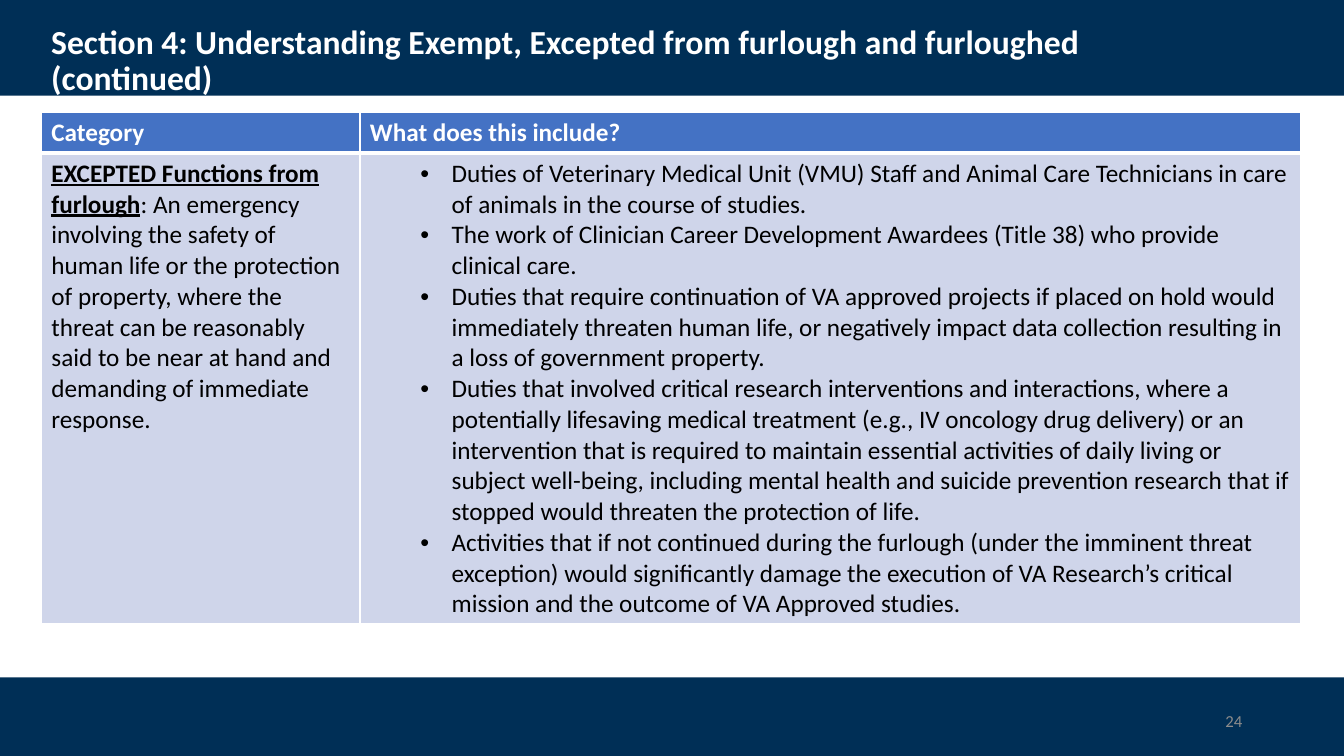
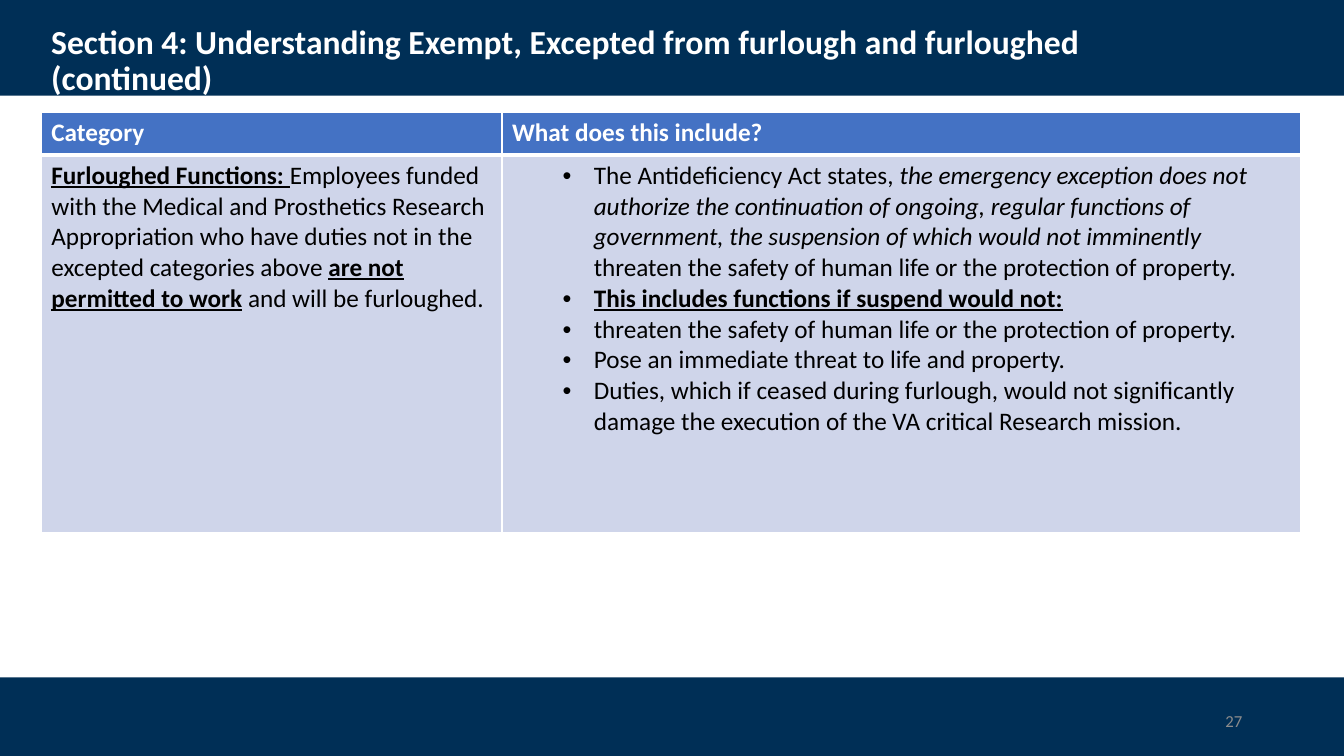
import pptx
import pptx.dml.color
import pptx.enum.shapes
import pptx.enum.text
import pptx.oxml
import pptx.oxml.ns
import pptx.util
from pptx.dml.color import RGBColor
from pptx.util import Inches, Pt

NAVY = RGBColor(0x00, 0x2F, 0x56)
BLUE = RGBColor(0x44, 0x72, 0xC4)
PALE_BLUE = RGBColor(0xCF, 0xD5, 0xEA)
WHITE = RGBColor(0xFF, 0xFF, 0xFF)
BLACK = RGBColor(0x00, 0x00, 0x00)
GREY = RGBColor(0x8C, 0x8C, 0x8C)

FONT = "Calibri"
SLIDE_WIDTH, SLIDE_HEIGHT = 13.33, 7.5
FOOTER_TOP = 6.72
TABLE_LEFT, TABLE_TOP, TABLE_WIDTH = 0.41, 1.12, 12.49
TITLE = ("Section 4: Understanding Exempt, Excepted from furlough "
         "and furloughed (continued)")
HEADINGS = ("Category", "What does this include?")

# Text is a list of (words, style) runs; style letters: b bold, i italic, u underline.
EXCEPTED = [
    ("EXCEPTED Functions from furlough", "bu"),
    (": An emergency involving the safety of human life or the protection of "
     "property, where the threat can be reasonably said to be near at hand and "
     "demanding of immediate response.", ""),
]
EXCEPTED_DUTIES = [
    [("Duties of Veterinary Medical Unit (VMU) Staff and Animal Care Technicians "
      "in care of animals in the course of studies.", "")],
    [("The work of Clinician Career Development Awardees (Title 38) who provide "
      "clinical care.", "")],
    [("Duties that require continuation of VA approved projects if placed on hold "
      "would immediately threaten human life, or negatively impact data collection "
      "resulting in a loss of government property.", "")],
    [("Duties that involved critical research interventions and interactions, where "
      "a potentially lifesaving medical treatment (e.g., IV oncology drug delivery) "
      "or an intervention that is required to maintain essential activities of daily "
      "living or subject well-being, including mental health and suicide prevention "
      "research that if stopped would threaten the protection of life.", "")],
    [("Activities that if not continued during the furlough (under the imminent "
      "threat exception) would significantly damage the execution of VA Research’s "
      "critical mission and the outcome of VA Approved studies.", "")],
]
FURLOUGHED = [
    ("Furloughed Functions: ", "bu"),
    ("Employees funded with the Medical and Prosthetics Research Appropriation who "
     "have duties not in the excepted categories above ", ""),
    ("are not permitted to work", "bu"),
    (" and will be furloughed.", ""),
]
FURLOUGHED_DUTIES = [
    [("The Antideficiency Act states, ", ""),
     ("the emergency exception does not authorize the continuation of ongoing, "
      "regular functions of government, the suspension of which would not "
      "imminently", "i"),
     (" threaten the safety of human life or the protection of property.", "")],
    [("This includes functions if suspend would not:", "bu")],
    [("threaten the safety of human life or the protection of property.", "")],
    [("Pose an immediate threat to life and property.", "")],
    [("Duties, which if ceased during furlough, would not significantly damage the "
      "execution of the VA critical Research mission.", "")],
]


def style_paragraph(paragraph, size, color, bold=False):
    font = paragraph.font
    font.name, font.size, font.bold = FONT, Pt(size), bold
    font.color.rgb = color


def add_band(slide, top, height):
    band = slide.shapes.add_shape(
        pptx.enum.shapes.MSO_SHAPE.RECTANGLE,
        0, Inches(top), Inches(SLIDE_WIDTH), Inches(height))
    band.shadow.inherit = False
    band.fill.solid()
    band.fill.fore_color.rgb = NAVY
    band.line.fill.background()


def add_label(slide, text, left, top, width, height):
    """Add a one-paragraph text box and return its paragraph."""
    frame = slide.shapes.add_textbox(
        Inches(left), Inches(top), Inches(width), Inches(height)).text_frame
    frame.word_wrap = True
    frame.vertical_anchor = pptx.enum.text.MSO_ANCHOR.MIDDLE
    paragraph = frame.paragraphs[0]
    paragraph.text = text
    return paragraph


def add_framed_slide(deck, number):
    """Add a slide with the shared bands, title and page number."""
    slide = deck.slides.add_slide(deck.slide_layouts[6])
    add_band(slide, 0, 0.95)
    add_band(slide, FOOTER_TOP, SLIDE_HEIGHT - FOOTER_TOP)
    title = add_label(slide, TITLE, 0.41, 0.27, 11.5, 0.68)
    title.line_spacing = 0.9
    style_paragraph(title, 24, WHITE, bold=True)
    page = add_label(slide, str(number), 9.42, 6.95, 3, 0.4)
    page.alignment = pptx.enum.text.PP_ALIGN.RIGHT
    style_paragraph(page, 12, GREY)
    return slide


def finish_cell(cell, color, top=1, bottom=1):
    """Give a cell white borders, with widths in points, and then its fill."""
    properties = cell._tc.get_or_add_tcPr()
    for side, width in (("L", 1), ("R", 1), ("T", top), ("B", bottom)):
        properties.append(pptx.oxml.parse_xml(
            f'<a:ln{side} {pptx.oxml.ns.nsdecls("a")} w="{Pt(width)}">'
            f'<a:solidFill><a:srgbClr val="{WHITE}"/></a:solidFill></a:ln{side}>'))
    cell.fill.solid()
    cell.fill.fore_color.rgb = color


def add_bullet(paragraph):
    paragraph.level = 1
    properties = paragraph._p.get_or_add_pPr()
    properties.set("marL", str(Inches(0.81)))
    properties.set("indent", str(Inches(-0.31)))
    for element in ('buFont {} typeface="Arial"', 'buChar {} char="•"'):
        properties.append(pptx.oxml.parse_xml(
            f'<a:{element.format(pptx.oxml.ns.nsdecls("a"))}/>'))


def write_body(cell, paragraphs, bulleted=False):
    frame = cell.text_frame
    for index, runs in enumerate(paragraphs):
        paragraph = frame.add_paragraph() if index else frame.paragraphs[0]
        if bulleted:
            add_bullet(paragraph)
        style_paragraph(paragraph, 18, BLACK)
        for words, style in runs:
            run = paragraph.add_run()
            run.text = words
            if "b" in style:
                run.font.bold = True
            if "i" in style:
                run.font.italic = True
            if "u" in style:
                run.font.underline = True
    finish_cell(cell, PALE_BLUE, top=3)


def add_category_table(slide, category_width, row_heights, category, duties):
    table = slide.shapes.add_table(
        2, 2, Inches(TABLE_LEFT), Inches(TABLE_TOP),
        Inches(TABLE_WIDTH), Inches(sum(row_heights))).table
    table.horz_banding = False
    table.columns[0].width = Inches(category_width)
    table.columns[1].width = Inches(TABLE_WIDTH - category_width)
    for row, height in zip(table.rows, row_heights):
        row.height = Inches(height)
    for column, heading in enumerate(HEADINGS):
        cell = table.cell(0, column)
        cell.text = heading
        style_paragraph(cell.text_frame.paragraphs[0], 18, WHITE, bold=True)
        finish_cell(cell, BLUE, bottom=3)
    write_body(table.cell(1, 0), [category])
    write_body(table.cell(1, 1), duties, bulleted=True)


def main():
    deck = pptx.Presentation()
    deck.slide_width = Inches(SLIDE_WIDTH)
    deck.slide_height = Inches(SLIDE_HEIGHT)
    add_category_table(add_framed_slide(deck, 24), 3.16, (0.4, 4.67),
                       EXCEPTED, EXCEPTED_DUTIES)
    add_category_table(add_framed_slide(deck, 27), 4.57, (0.42, 3.74),
                       FURLOUGHED, FURLOUGHED_DUTIES)
    deck.save("out.pptx")


if __name__ == "__main__":
    main()
